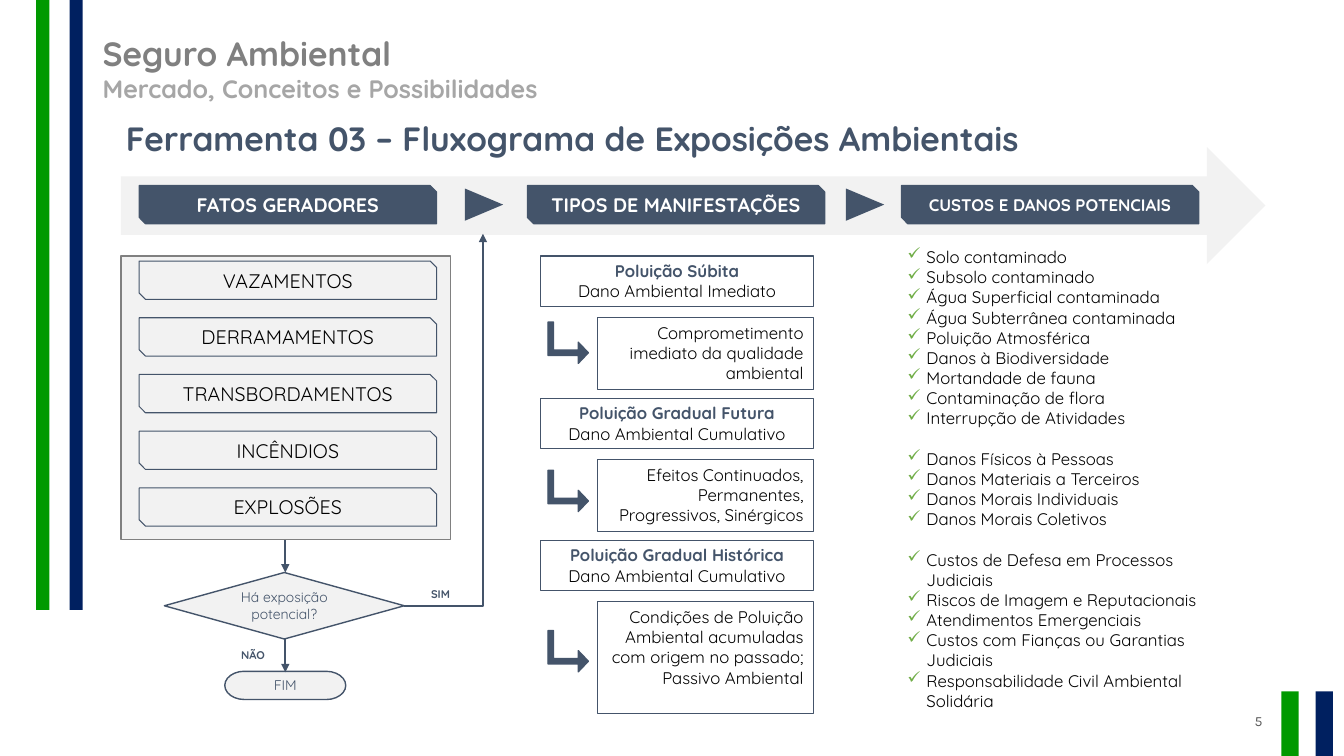
from lxml import etree
from pptx import Presentation
from pptx.dml.color import RGBColor
from pptx.enum.shapes import MSO_CONNECTOR, MSO_SHAPE
from pptx.enum.text import MSO_ANCHOR, PP_ALIGN
from pptx.oxml.ns import qn
from pptx.util import Inches, Pt

# Content
PAGE = "5"
HEADER = ("Seguro Ambiental", "Mercado, Conceitos e Possibilidades")
TITLE = "Ferramenta 03 – Fluxograma de Exposições Ambientais"
STAGES = [  # left, heading, size
    (1.38, "FATOS GERADORES", 14),
    (5.23, "TIPOS DE MANIFESTAÇÕES", 14),
    (8.94, "CUSTOS E DANOS POTENCIAIS", 12),
]
FACTS = ["VAZAMENTOS", "DERRAMAMENTOS", "TRANSBORDAMENTOS", "INCÊNDIOS", "EXPLOSÕES"]
MANIFESTATIONS = [  # kind, damage, detail, detail height, bent arrow top
    ("Poluição Súbita", "Dano Ambiental Imediato",
     "Comprometimento imediato da qualidade ambiental", 0.71, 3.2),
    ("Poluição Gradual Futura", "Dano Ambiental Cumulativo",
     "Efeitos Continuados, Permanentes, Progressivos, Sinérgicos", 0.71, 4.67),
    ("Poluição Gradual Histórica", "Dano Ambiental Cumulativo",
     "Condições de Poluição Ambiental acumuladas com origem no passado; Passivo Ambiental",
     1.11, 6.26),
]
COSTS = [
    ["Solo contaminado", "Subsolo contaminado", "Água Superficial contaminada",
     "Água Subterrânea contaminada", "Poluição Atmosférica", "Danos à Biodiversidade",
     "Mortandade de fauna", "Contaminação de flora", "Interrupção de Atividades"],
    ["Danos Físicos à Pessoas", "Danos Materiais a Terceiros",
     "Danos Morais Individuais", "Danos Morais Coletivos"],
    ["Custos de Defesa em Processos Judiciais", "Riscos de Imagem e Reputacionais",
     "Atendimentos Emergenciais", "Custos com Fianças ou Garantias Judiciais",
     "Responsabilidade Civil Ambiental Solidária"],
]
QUESTION, YES, NO, END = "Há exposição potencial?", "SIM", "NÃO", "FIM"

# Palette and grid
SLATE, PALE, GREY, BLACK, WHITE = "44546A", "F2F2F2", "808080", "000000", "FFFFFF"
GREEN, NAVY, TICK = "009900", "002060", "70AD47"
SLIDE_W, SLIDE_H = 13.33, 7.5
STAGE_TOP, TAG_W, TAG_H = 1.84, 2.95, 0.38
BODY_TOP = 2.54
FACT_TOP, FACT_PITCH = 2.59, 0.5625
KIND_LEFT, KIND_W, KIND_H, KIND_PITCH = 5.36, 2.71, 0.5, 1.41
DETAIL_INDENT, DETAIL_DROP = 0.57, 0.61
FLOW_X = 2.83
COST_LINE = 14.4

prs = Presentation()
prs.slide_width, prs.slide_height = Inches(SLIDE_W), Inches(SLIDE_H)
slide = prs.slides.add_slide(prs.slide_layouts[6])


def rgb(value):
    return RGBColor.from_string(value)


def write(frame, text, size=12, color=BLACK, bold=False, align=PP_ALIGN.LEFT,
          font="Quicksand", bullet=None, before=0):
    """Add one paragraph, filling the frame's first one if it is still empty."""
    paragraph = frame.paragraphs[0]
    if paragraph.runs:
        paragraph = frame.add_paragraph()
    paragraph.alignment = align
    if before:
        paragraph.space_before = Pt(before)
    if bullet:
        props = paragraph._p.get_or_add_pPr()
        props.set("marL", str(Inches(0.19)))
        props.set("indent", str(-Inches(0.19)))
        tint = etree.SubElement(props, qn("a:buClr"))
        etree.SubElement(tint, qn("a:srgbClr"), val=TICK)
        etree.SubElement(props, qn("a:buChar"), char=bullet)
    run = paragraph.add_run()
    run.text = text
    run.font.name, run.font.size, run.font.bold = font, Pt(size), bold
    run.font.color.rgb = rgb(color)


def add_text_box(left, top, width, height, anchor=MSO_ANCHOR.TOP):
    frame = slide.shapes.add_textbox(*map(Inches, (left, top, width, height))).text_frame
    frame.word_wrap = True
    frame.vertical_anchor = anchor
    return frame


def add_shape(kind, left, top, width, height, fill=None, line=None, weight=0.75,
              anchor=MSO_ANCHOR.MIDDLE, rotation=0):
    shape = slide.shapes.add_shape(kind, *map(Inches, (left, top, width, height)))
    shape.shadow.inherit = False
    shape.rotation = rotation
    if fill:
        shape.fill.solid()
        shape.fill.fore_color.rgb = rgb(fill)
    else:
        shape.fill.background()
    if line:
        shape.line.color.rgb = rgb(line)
        shape.line.width = Pt(weight)
    else:
        shape.line.fill.background()
    shape.text_frame.word_wrap = True
    shape.text_frame.vertical_anchor = anchor
    return shape


def add_tag(left, top, text, size=14, fill=None, color=BLACK, bold=False):
    tag = add_shape(MSO_SHAPE.SNIP_2_DIAG_RECTANGLE, left, top, TAG_W, TAG_H, fill, SLATE)
    write(tag.text_frame, text, size=size, color=color, bold=bold, align=PP_ALIGN.CENTER)


def add_arrow(start, end, bent=False):
    kind = MSO_CONNECTOR.ELBOW if bent else MSO_CONNECTOR.STRAIGHT
    arrow = slide.shapes.add_connector(kind, *map(Inches, (*start, *end)))
    arrow.line.color.rgb = rgb(SLATE)
    arrow.line.width = Pt(1.5)
    etree.SubElement(arrow.line._get_or_add_ln(), qn("a:tailEnd"), type="triangle")
    props = arrow._element.spPr
    etree.SubElement(props, qn("a:effectLst"))
    if bent:  # a single corner
        props.find(qn("a:prstGeom")).set("prst", "bentConnector2")


# Side bars, header and page number
for left, top, width, height, color in [
    (0.36, 0, 0.13, 6.05, GREEN), (0.69, 0, 0.13, 6.05, NAVY),
    (12.71, 6.86, 0.17, 0.64, GREEN), (13.05, 6.86, 0.17, 0.64, NAVY),
]:
    add_shape(MSO_SHAPE.RECTANGLE, left, top, width, height, color)

page = add_text_box(9.62, 6.95, 3, 0.4, MSO_ANCHOR.MIDDLE)
write(page, PAGE, size=10, color="595959", font="Karla", align=PP_ALIGN.RIGHT)
header = add_text_box(0.92, 0.28, 9.79, 0.81)
write(header, HEADER[0], size=24, color=GREY, bold=True)
write(header, HEADER[1], size=18, color="A6A6A6", bold=True)
write(add_text_box(1.15, 1.12, 10.55, 0.5), TITLE, size=24, color=SLATE, bold=True)

# Stage band
add_shape(MSO_SHAPE.RECTANGLE, 1.2, BODY_TOP, 3.27, 2.81, PALE, GREY, 1)
add_shape(MSO_SHAPE.RIGHT_ARROW, 1.2, 1.46, 11.35, 1.16, PALE)
for left, heading, size in STAGES:
    add_tag(left, STAGE_TOP, heading, size, SLATE, WHITE, True)
for left in (4.64, 8.42):
    add_shape(MSO_SHAPE.ISOSCELES_TRIANGLE, left, STAGE_TOP, 0.32, TAG_H, SLATE, rotation=90)

# Triggering facts
for row, fact in enumerate(FACTS):
    add_tag(STAGES[0][0], FACT_TOP + row * FACT_PITCH, fact)

# Manifestations
for row, (kind, damage, detail, detail_h, bend_top) in enumerate(MANIFESTATIONS):
    top = BODY_TOP + row * KIND_PITCH
    kind_box = add_shape(MSO_SHAPE.RECTANGLE, KIND_LEFT, top, KIND_W, KIND_H,
                         line=SLATE, anchor=MSO_ANCHOR.TOP).text_frame
    write(kind_box, kind, color=SLATE, bold=True, align=PP_ALIGN.CENTER)
    write(kind_box, damage, align=PP_ALIGN.CENTER)
    detail_box = add_shape(MSO_SHAPE.RECTANGLE, KIND_LEFT + DETAIL_INDENT, top + DETAIL_DROP,
                           KIND_W - DETAIL_INDENT, detail_h, line=SLATE, anchor=MSO_ANCHOR.TOP)
    write(detail_box.text_frame, detail, align=PP_ALIGN.RIGHT)
    bend = add_shape(MSO_SHAPE.BENT_UP_ARROW, 5.43, bend_top, 0.41, 0.4, SLATE, SLATE, 1,
                     rotation=90)
    bend.adjustments[0], bend.adjustments[1], bend.adjustments[2] = 0.135, 0.262, 0.25

# Potential costs and damages
costs = add_text_box(8.9, 2.4, 3.11, 4.95)
for group_index, group in enumerate(COSTS):
    for item_index, item in enumerate(group):
        opens_group = group_index > 0 and item_index == 0
        write(costs, item, bullet="✓", before=COST_LINE if opens_group else 0)

# Decision flow
for kind, text, box in [
    (MSO_SHAPE.FLOWCHART_DECISION, QUESTION, (1.63, 5.68, 2.38, 0.66)),
    (MSO_SHAPE.FLOWCHART_TERMINATOR, END, (2.23, 6.66, 1.2, 0.28)),
]:
    step = add_shape(kind, *box, fill=PALE, line=SLATE, weight=1)
    write(step.text_frame, text, size=10, color=SLATE, align=PP_ALIGN.CENTER)
for answer, left, top in [(YES, 3.92, 5.78), (NO, 2.06, 6.38)]:
    write(add_text_box(left, top, 0.9, 0.24), answer, size=8, color=SLATE, bold=True,
          align=PP_ALIGN.CENTER)
add_arrow((4.01, 6.01), (4.79, 2.32), bent=True)
add_arrow((FLOW_X, 5.36), (FLOW_X, 5.68))
add_arrow((FLOW_X, 6.34), (FLOW_X, 6.67))

prs.save("out.pptx")
